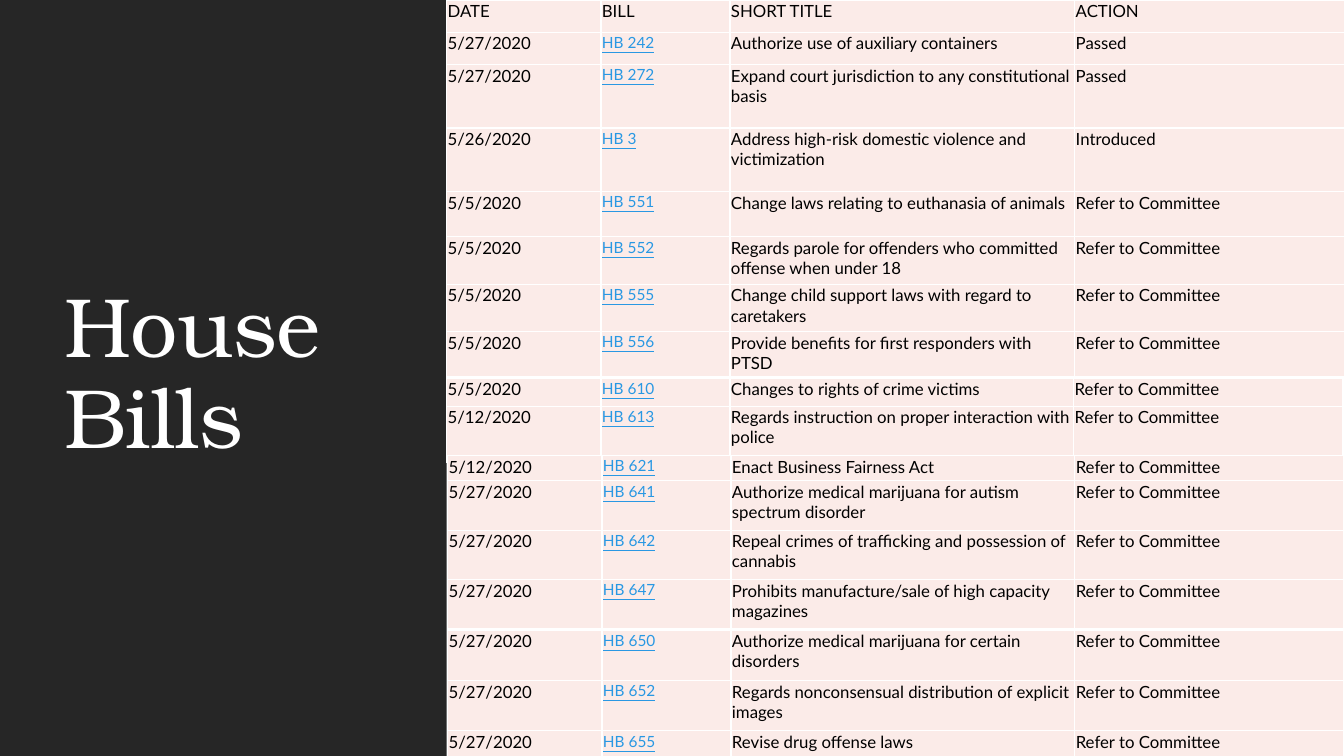
from dataclasses import dataclass

from lxml import etree
from pptx import Presentation
from pptx import util as u
from pptx.dml import color
from pptx.enum import shapes, text
from pptx.oxml import ns


@dataclass(frozen=True)
class Theme:
    panel: str = "262626"
    paper: str = "FFFFFF"
    cell: str = "FBEBE8"
    ink: str = "000000"
    link: str = "2998E3"
    title_font: str = "TeX Gyre Bonum"
    body_font: str = "Lato"
    title_size: int = 60
    body_size: int = 12
    link_size: int = 11


THEME = Theme()
COMMITTEE = "Refer to Committee"
WIDE_COLUMNS = (1.53, 1.28, 3.42, 2.68)
NARROW_COLUMNS = (1.53, 1.28, 3.41, 2.67)

# Each section: left, top, column widths, then rows of (height, cells)
SECTIONS = [
    (4.43, 0, WIDE_COLUMNS, [
        (0.32, ("DATE", "BILL", "SHORT TITLE", "ACTION")),
        (0.32, ("5/27/2020", "HB 242", "Authorize use of auxiliary containers", "Passed")),
        (0.63, ("5/27/2020", "HB 272",
                "Expand court jurisdiction to any constitutional basis", "Passed")),
        (0.63, ("5/26/2020", "HB 3",
                "Address high-risk domestic violence and victimization", "Introduced")),
    ]),
    (4.43, 1.9, WIDE_COLUMNS, [
        (0.45, ("5/5/2020", "HB 551",
                "Change laws relating to euthanasia of animals", COMMITTEE)),
        (0.47, ("5/5/2020", "HB 552",
                "Regards parole for offenders who committed offense when under 18", COMMITTEE)),
        (0.47, ("5/5/2020", "HB 555",
                "Change child support laws with regard to caretakers", COMMITTEE)),
        (0.45, ("5/5/2020", "HB 556",
                "Provide benefits for first responders with PTSD", COMMITTEE)),
    ]),
    (4.43, 3.75, NARROW_COLUMNS, [
        (0.28, ("5/5/2020", "HB 610", "Changes to rights of crime victims", COMMITTEE)),
        (0.56, ("5/12/2020", "HB 613",
                "Regards instruction on proper interaction with police", COMMITTEE)),
    ]),
    (4.44, 4.52, NARROW_COLUMNS, [
        (0.25, ("5/12/2020", "HB 621", "Enact Business Fairness Act", COMMITTEE)),
        (0.49, ("5/27/2020", "HB 641",
                "Authorize medical marijuana for autism spectrum disorder", COMMITTEE)),
        (0.49, ("5/27/2020", "HB 642",
                "Repeal crimes of trafficking and possession of cannabis", COMMITTEE)),
        (0.49, ("5/27/2020", "HB 647",
                "Prohibits manufacture/sale of high capacity magazines", COMMITTEE)),
    ]),
    (4.44, 6.25, NARROW_COLUMNS, [
        (0.5, ("5/27/2020", "HB 650",
               "Authorize medical marijuana for certain disorders", COMMITTEE)),
        (0.5, ("5/27/2020", "HB 652",
               "Regards nonconsensual distribution of explicit images", COMMITTEE)),
        (0.26, ("5/27/2020", "HB 655", "Revise drug offense laws", COMMITTEE)),
    ]),
]


def paint(fill, value):
    fill.solid()
    fill.fore_color.rgb = color.RGBColor.from_string(value)


def set_font(font, name, size, value):
    font.name = name
    font.size = u.Pt(size)
    font.color.rgb = color.RGBColor.from_string(value)


def add_title_panel(page, left, top, width, height):
    # Dark panel
    panel = page.shapes.add_shape(
        shapes.MSO_SHAPE.RECTANGLE, *map(u.Inches, (left, top, width, height)))
    panel.shadow.inherit = False
    paint(panel.fill, THEME.panel)
    panel.line.fill.background()

    # Title, centred vertically within the panel
    box = page.shapes.add_textbox(
        u.Inches(left + 0.54), u.Inches(top + 0.57),
        u.Inches(width - 1.06), u.Inches(height - 1.19))
    frame = box.text_frame
    frame.word_wrap = True
    frame.vertical_anchor = text.MSO_ANCHOR.MIDDLE
    para = frame.paragraphs[0]
    para.line_spacing = 0.9
    set_font(para.font, THEME.title_font, THEME.title_size, THEME.paper)
    para.text = "House\vBills"
    for span in para.runs:
        set_font(span.font, THEME.title_font, THEME.title_size, THEME.paper)
        span.font._element.set("spc", "-50")


def add_borders(cell):
    properties = cell._tc.get_or_add_tcPr()
    for side in ("lnL", "lnR", "lnT", "lnB"):
        line = etree.SubElement(properties, ns.qn(f"a:{side}"), w=str(u.Pt(1)))
        fill = etree.SubElement(line, ns.qn("a:solidFill"))
        etree.SubElement(fill, ns.qn("a:srgbClr"), val=THEME.paper)


def fill_cell(cell, words, is_link):
    add_borders(cell)
    paint(cell.fill, THEME.cell)
    cell.margin_left = cell.margin_right = cell.margin_top = u.Inches(0.01)
    cell.margin_bottom = 0
    para = cell.text_frame.paragraphs[0]
    para.text = words
    if is_link:
        set_font(para.font, THEME.body_font, THEME.link_size, THEME.link)
        para.font.underline = True
    else:
        set_font(para.font, THEME.body_font, THEME.body_size, THEME.ink)


def add_bill_table(page, left, top, widths, rows):
    height = sum(row_height for row_height, _ in rows)
    table = page.shapes.add_table(
        len(rows), len(widths),
        *map(u.Inches, (left, top, sum(widths), height))).table
    table.first_row = table.horz_banding = False
    for column, width in zip(table.columns, widths):
        column.width = u.Inches(width)
    for row, (row_height, entries) in zip(table.rows, rows):
        row.height = u.Inches(row_height)
        for cell, words in zip(row.cells, entries):
            fill_cell(cell, words, words.startswith("HB "))


def main():
    deck = Presentation()
    deck.slide_width, deck.slide_height = u.Inches(13.33), u.Inches(7.5)
    page = deck.slides.add_slide(deck.slide_layouts[6])
    paint(page.background.fill, THEME.paper)
    add_title_panel(page, 0, 0, 4.43, 7.5)
    for section in SECTIONS:
        add_bill_table(page, *section)
    deck.save("out.pptx")


if __name__ == "__main__":
    main()
